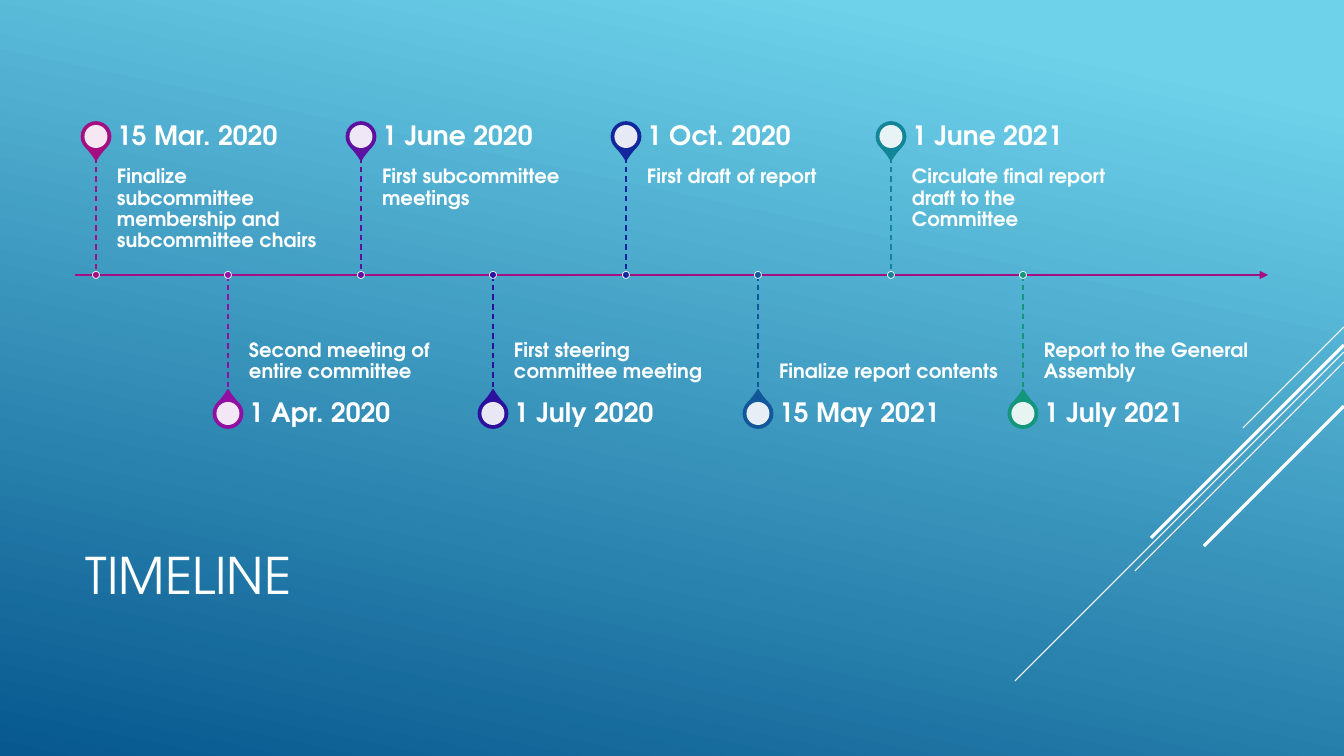
from lxml import etree
from pptx import Presentation
from pptx import util as u
from pptx.dml.color import RGBColor
from pptx.enum import dml, shapes, text
from pptx.oxml.ns import qn

EMU_PER_PX = 914400 / 100.8
FONT = "TeX Gyre Adventor"
COLORS = {
    "white": "FFFFFF", "sky": "6ED2EB", "deep": "06588E",
    "magenta": "A50E82", "purple": "920FA3", "violet": "5E10A1", "indigo": "2C119E",
    "navy": "12279C", "blue": "12579A", "teal": "138598", "green": "14967C",
}
MILESTONES = [
    ("magenta", "15 Mar. 2020", "Finalize subcommittee membership and subcommittee chairs"),
    ("purple", "1 Apr. 2020", "Second meeting of entire committee"),
    ("violet", "1 June 2020", "First subcommittee meetings"),
    ("indigo", "1 July 2020", "First steering committee meeting"),
    ("navy", "1 Oct. 2020", "First draft of report"),
    ("blue", "15 May 2021", "Finalize report contents"),
    ("teal", "1 June 2021", "Circulate final report draft to the Committee"),
    ("green", "1 July 2021", "Report to the General Assembly"),
]
# Top end on the right edge of the slide, run towards the lower left, line width
STROKES = [(327, 101, 0.75), (352, 329, 0.75), (362, 209, 0.75),
           (345, 193, 2.25), (406, 140, 2.25)]


def px(length):
    return u.Emu(round(length * EMU_PER_PX))


def rgb(name):
    return RGBColor.from_string(COLORS[name])


def add_line(page, start, end, color, width):
    line = page.shapes.add_connector(
        shapes.MSO_CONNECTOR.STRAIGHT, *map(px, start + end))
    line.line.color.rgb = rgb(color)
    line.line.width = u.Pt(width)
    etree.SubElement(line.element.spPr, qn("a:effectLst"))
    return line


def add_centred(page, kind, center, size, fill, outline=None, width=0):
    x, y = center
    shape = page.shapes.add_shape(
        kind, px(x - size / 2), px(y - size / 2), px(size), px(size))
    shape.shadow.inherit = False
    shape.fill.solid()
    shape.fill.fore_color.rgb = rgb(fill)
    if outline:
        shape.line.color.rgb = rgb(outline)
        shape.line.width = u.Pt(width)
    else:
        shape.line.fill.background()
    return shape


def write(shape, words, size, bold, anchor, insets):
    """Fill a shape with one left-aligned paragraph; insets run left, top, right, bottom."""
    frame = shape.text_frame
    frame.text = words
    frame.word_wrap = True
    frame.auto_size = text.MSO_AUTO_SIZE.NONE
    frame.vertical_anchor = anchor
    (frame.margin_left, frame.margin_top,
     frame.margin_right, frame.margin_bottom) = map(px, insets)
    para = frame.paragraphs[0]
    para.alignment = text.PP_ALIGN.LEFT
    para.line_spacing = 0.9
    font = para.runs[0].font
    font.name, font.size, font.bold = FONT, u.Pt(size), bold
    font.color.rgb = rgb("white")


def add_text(page, box, *style):
    write(page.shapes.add_textbox(*map(px, box)), *style)


def paint_background(page):
    fill = page.background.fill
    fill.gradient()
    fill.gradient_angle = 258
    for stop, color, position in zip(fill.gradient_stops, ("sky", "deep"), (0.1, 1)):
        stop.color.rgb = rgb(color)
        stop.position = position


def add_strokes(page, right):
    for top, run, width in STROKES:
        add_line(page, (right, top), (right - run, top + run), "white", width)


def add_title(page, box):
    title = page.shapes.title
    title.left, title.top, title.width, title.height = map(px, box)
    write(title, "TIMELINE", 36, False, text.MSO_ANCHOR.MIDDLE, (10, 5, 10, 5))


def add_milestone(page, box, above, color, date, task):
    """Place one milestone in a box that has the axis along its lower or upper edge."""
    left, top, width, height = box
    date_height, text_shift = 41, 21
    task_height = height - date_height
    if above:
        axis, date_top, task_top = top + height, top, top + date_height
        joint, turn = task_top, 135
        anchor, insets = text.MSO_ANCHOR.TOP, (0, 10, 10, 15)
    else:
        axis, date_top, task_top = top, top + task_height, top
        joint, turn = date_top, 315
        anchor, insets = text.MSO_ANCHOR.BOTTOM, (0, 15, 0, 10)
    center = left, date_top + date_height / 2

    pin = add_centred(page, shapes.MSO_SHAPE.TEAR, center, 29, color, color, 1.25)
    pin.adjustments[0] = 1.15
    pin.rotation = turn
    hole = add_centred(page, shapes.MSO_SHAPE.OVAL, center, 23, "white")
    tint = hole.element.spPr.find(qn("a:solidFill"))[0]
    etree.SubElement(tint, qn("a:alpha"), val="90000")

    text_left, text_width = left + text_shift, width - text_shift
    add_text(page, (text_left, task_top, text_width, task_height),
             task, 14, True, anchor, insets)
    add_text(page, (text_left, date_top, text_width, date_height),
             date, 19, True, text.MSO_ANCHOR.MIDDLE, (0, 0, 13, 0))

    stem = add_line(page, (left, min(joint, axis)), (left, max(joint, axis)), color, 1)
    stem.line.dash_style = dml.MSO_LINE.DASH
    add_centred(page, shapes.MSO_SHAPE.OVAL, (left, axis), 7, color, "white", 0.5)


def add_timeline(page, box):
    left, top, width, height = box
    reach = height // 2
    axis = top + reach
    arrow = add_line(page, (left, axis), (left + width, axis), "magenta", 1.5)
    etree.SubElement(arrow.line._get_or_add_ln(), qn("a:tailEnd"), type="triangle")

    first, span = left + 21, 927
    for index, milestone in enumerate(MILESTONES):
        above = index % 2 == 0
        x = first + round(index * span / (len(MILESTONES) - 1))
        add_milestone(page, (x, top if above else axis, 242, reach), above, *milestone)


def main():
    deck = Presentation()
    deck.slide_width, deck.slide_height = px(1344), px(756)
    page = deck.slides.add_slide(deck.slide_layouts.get_by_name("Title Only"))
    paint_background(page)
    add_strokes(page, 1344)
    add_title(page, (76, 495, 940, 166))
    add_timeline(page, (75, 116, 1193, 318))
    deck.save("out.pptx")


if __name__ == "__main__":
    main()
